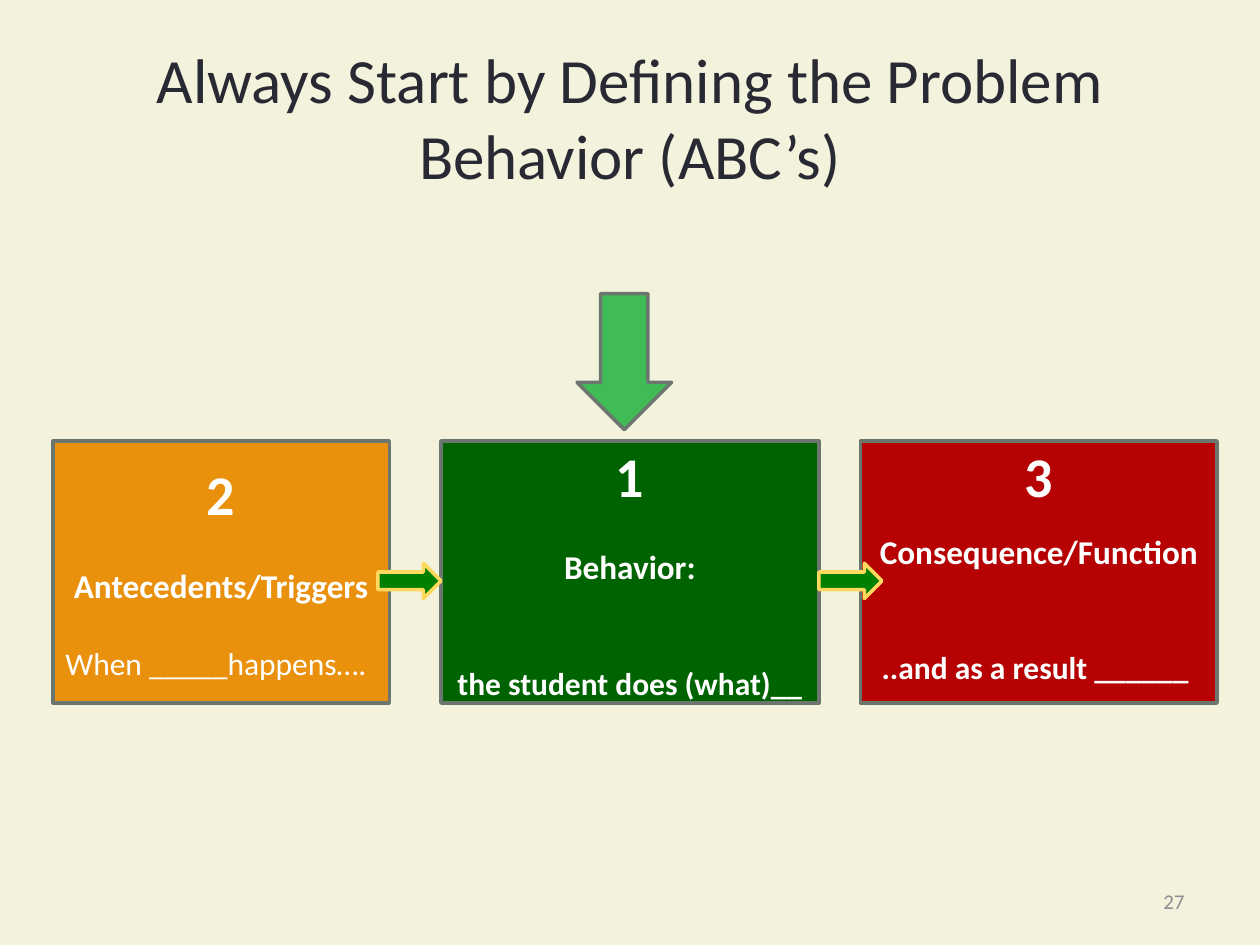
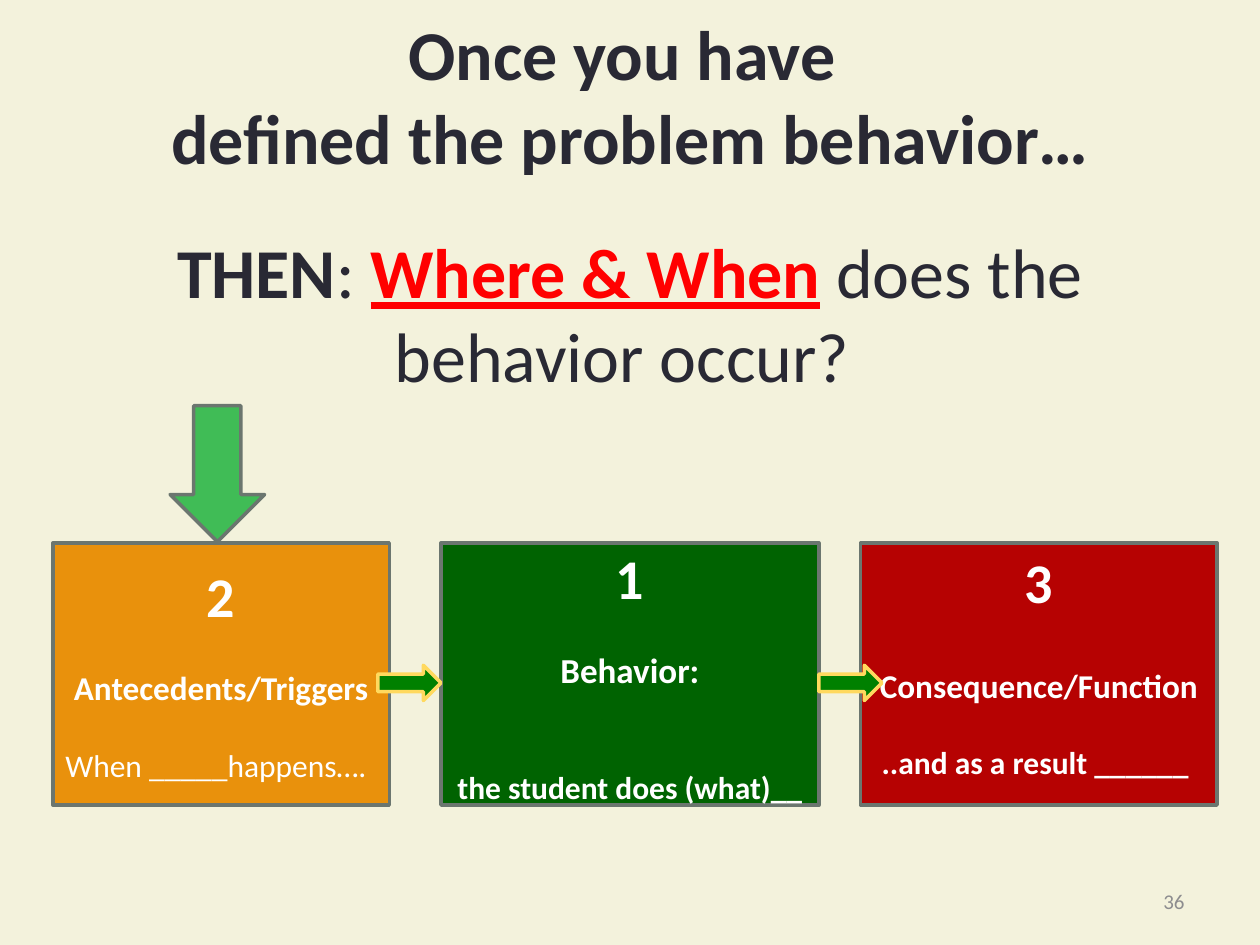
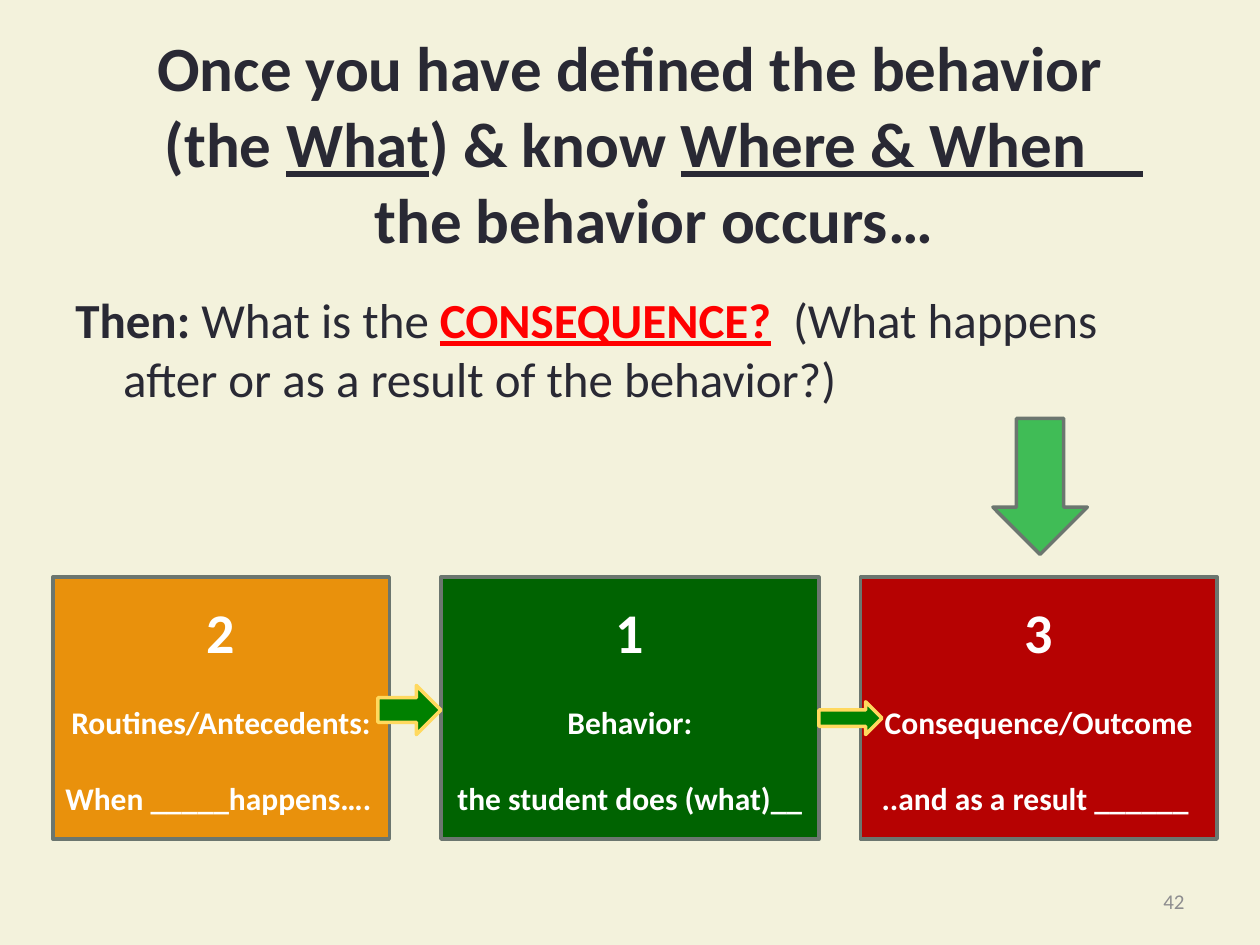
from pptx import Presentation
from pptx.dml.color import RGBColor
from pptx.enum.shapes import MSO_SHAPE
from pptx.enum.text import MSO_ANCHOR, MSO_AUTO_SIZE, PP_ALIGN
from pptx.util import Inches, Pt

LEFT, CENTER, RIGHT = PP_ALIGN.LEFT, PP_ALIGN.CENTER, PP_ALIGN.RIGHT
TOP, MIDDLE = MSO_ANCHOR.TOP, MSO_ANCHOR.MIDDLE
RECTANGLE = MSO_SHAPE.RECTANGLE
RIGHT_ARROW, DOWN_ARROW = MSO_SHAPE.RIGHT_ARROW, MSO_SHAPE.DOWN_ARROW

FONT = "Calibri"
COLORS = {
    "page": "F3F2DC", "ink": "292934", "white": "FFFFFF", "alert": "FF0000",
    "number": "8D8D8F", "edge": "6B766F",
    "antecedent": "E9910C", "behavior": "006301", "consequence": "B60202",
    "flow": "008000", "flow_edge": "FFD95E", "pointer": "40BC56",
}
CARD_HEIGHT = 2.08
# left, width, fill and number of each card, in reading order
CARDS = [
    (0.42, 2.67, "antecedent", "2"),
    (3.5, 3, "behavior", "1"),
    (6.83, 2.83, "consequence", "3"),
]
BOLD = {"bold": True}
UNDERLINED = {"bold": True, "underline": True}
ALERT = {"bold": True, "underline": True, "color": "alert"}
WHEN = "When _____happens…."
DOES = "the student does (what)__"
RESULT = "..and as a result ______ "


def color(name):
    return RGBColor.from_string(COLORS[name])


class SlideBuilder:
    """Holds the shared style and the slide being built."""

    def __init__(self):
        self.deck = Presentation()
        self.deck.slide_width, self.deck.slide_height = Inches(10), Inches(7.5)
        background = self.deck.slide_master.background.fill
        background.solid()
        background.fore_color.rgb = color("page")
        self.page = None

    def new_page(self, number):
        self.page = self.deck.slides.add_slide(self.deck.slide_layouts[5])
        frame = self.text_box(7.17, 6.95, 2.33, 0.4, MIDDLE)
        self.fill_paragraph(frame.paragraphs[0], [(number, {})], 12, "number", RIGHT)

    def text_box(self, left, top, width, height, anchor=TOP):
        box = self.page.shapes.add_textbox(
            Inches(left), Inches(top), Inches(width), Inches(height))
        box.text_frame.word_wrap = True
        box.text_frame.vertical_anchor = anchor
        return box.text_frame

    def fill_paragraph(self, paragraph, spans, size, tone, align=LEFT, before=0):
        """Fill a paragraph with (text, options) spans."""
        paragraph.alignment = align
        paragraph.space_before = Pt(before)
        for text, options in spans:
            for index, line in enumerate(text.split("\v")):
                if index:
                    paragraph.add_line_break()
                span = paragraph.add_run()
                span.text = line
                span.font.name = FONT
                span.font.size = Pt(size)
                span.font.bold = options.get("bold", False)
                span.font.underline = options.get("underline", False)
                span.font.color.rgb = color(options.get("color", tone))

    def indent(self, paragraph, left, first):
        properties = paragraph._p.get_or_add_pPr()
        properties.set("marL", str(Inches(left)))
        properties.set("indent", str(Inches(first)))

    def title(self, paragraphs, size, top=0.3, height=1.25, anchor=MIDDLE, gap=0):
        box = self.page.shapes.title
        box.left, box.top = Inches(0.5), Inches(top)
        box.width, box.height = Inches(9), Inches(height)
        frame = box.text_frame
        frame.auto_size = MSO_AUTO_SIZE.NONE
        frame.word_wrap = True
        frame.vertical_anchor = anchor
        for index, spans in enumerate(paragraphs):
            paragraph = frame.add_paragraph() if index else frame.paragraphs[0]
            self.fill_paragraph(paragraph, spans, size, "ink", CENTER,
                                gap if index else 0)
        return frame

    def shape(self, kind, left, top, width, height, fill, edge="edge"):
        shape = self.page.shapes.add_shape(
            kind, Inches(left), Inches(top), Inches(width), Inches(height))
        shape.shadow.inherit = False
        shape.fill.solid()
        shape.fill.fore_color.rgb = color(fill)
        shape.line.color.rgb = color(edge)
        shape.line.width = Pt(2)
        return shape

    def cards(self, top, contents):
        """Draw the cards; each content is label, label size, detail,
        detail weight and the spaces above the three lines in points."""
        for card, content in zip(CARDS, contents):
            left, width, fill, number = card
            label, size, detail, bold, gaps = content
            frame = self.shape(RECTANGLE, left, top, width, CARD_HEIGHT, fill).text_frame
            frame.word_wrap = True
            frame.vertical_anchor = TOP
            frame.margin_top, frame.margin_bottom = Pt(gaps[0]), 0
            first = frame.paragraphs[0]
            self.fill_paragraph(first, [(number, BOLD)], 32, "white", CENTER)
            if fill == "behavior":
                self.indent(first, 0, -0.2)
            self.fill_paragraph(frame.add_paragraph(), [(label, BOLD)], size,
                                "white", CENTER, gaps[1])
            self.fill_paragraph(frame.add_paragraph(), [(detail, {"bold": bold})], 18,
                                "white", LEFT if fill == "antecedent" else CENTER,
                                gaps[2])

    def flow_arrows(self, *places):
        """Draw an arrow from card to card for each (top, height)."""
        for left, (top, height) in zip((3, 6.5), places):
            self.shape(RIGHT_ARROW, left, top, 0.5, height, "flow", "flow_edge")

    def pointer(self, left, top):
        self.shape(DOWN_ARROW, left, top, 0.75, 1.08, "pointer")


def define_behavior(builder):
    builder.new_page("27")
    builder.title([[("Always Start by Defining the Problem Behavior (ABC’s)", {})]], 36)
    builder.cards(3.5, [
        ("Antecedents/Triggers", 19, WHEN, False, (10.8, 22, 22)),
        ("Behavior:", 19, DOES, True, (0, 22, 44)),
        ("Consequence/Function", 19, RESULT, True, (0, 13, 44)),
    ])
    builder.flow_arrows((4.47, 0.28), (4.47, 0.28))
    builder.pointer(4.58, 2.33)


def find_where_and_when(builder):
    builder.new_page("36")
    builder.title([
        [("Once you have \vdefined the problem behavior…", BOLD)],
        [("THEN", BOLD), (": ", {}), ("Where & When", ALERT),
         (" does the behavior occur? ", {})],
    ], 40, top=0.03, height=3.2, anchor=TOP, gap=29)
    builder.cards(4.31, [
        ("Antecedents/Triggers", 19, WHEN, False, (10.8, 22, 22)),
        ("Behavior:", 20, DOES, True, (0, 22, 44)),
        ("Consequence/Function", 19, RESULT, True, (2.3, 29, 22)),
    ])
    builder.flow_arrows((5.28, 0.28), (5.28, 0.28))
    builder.pointer(1.35, 3.22)


def find_consequence(builder):
    builder.new_page("42")
    heading = builder.title([[
        ("Once you have defined the behavior\v(the ", BOLD), ("What", UNDERLINED),
        (") & know ", BOLD), ("Where & When    ", UNDERLINED),
        ("\vthe behavior occurs…", BOLD),
    ]], 36, top=0.18, height=1.95, anchor=TOP)
    builder.indent(heading.paragraphs[0], 0.38, -0.97)
    question = builder.text_box(0.5, 2.25, 9, 1.05).paragraphs[0]
    builder.fill_paragraph(question, [
        ("Then:", BOLD), (" What is the ", {}), ("CONSEQUENCE?", ALERT),
        ("  (What happens after or as a result of the behavior?)", {}),
    ], 28, "ink")
    builder.indent(question, 0.38, -0.38)
    gaps = (11.4, 22, 22)
    builder.cards(4.58, [
        ("Routines/Antecedents:", 18, WHEN, True, gaps),
        ("Behavior:", 18, DOES, True, gaps),
        ("Consequence/Outcome", 18, RESULT, True, gaps),
    ])
    builder.flow_arrows((5.44, 0.39), (5.57, 0.26))
    builder.pointer(7.88, 3.32)


def main():
    builder = SlideBuilder()
    define_behavior(builder)
    find_where_and_when(builder)
    find_consequence(builder)
    builder.deck.save("out.pptx")


if __name__ == "__main__":
    main()
